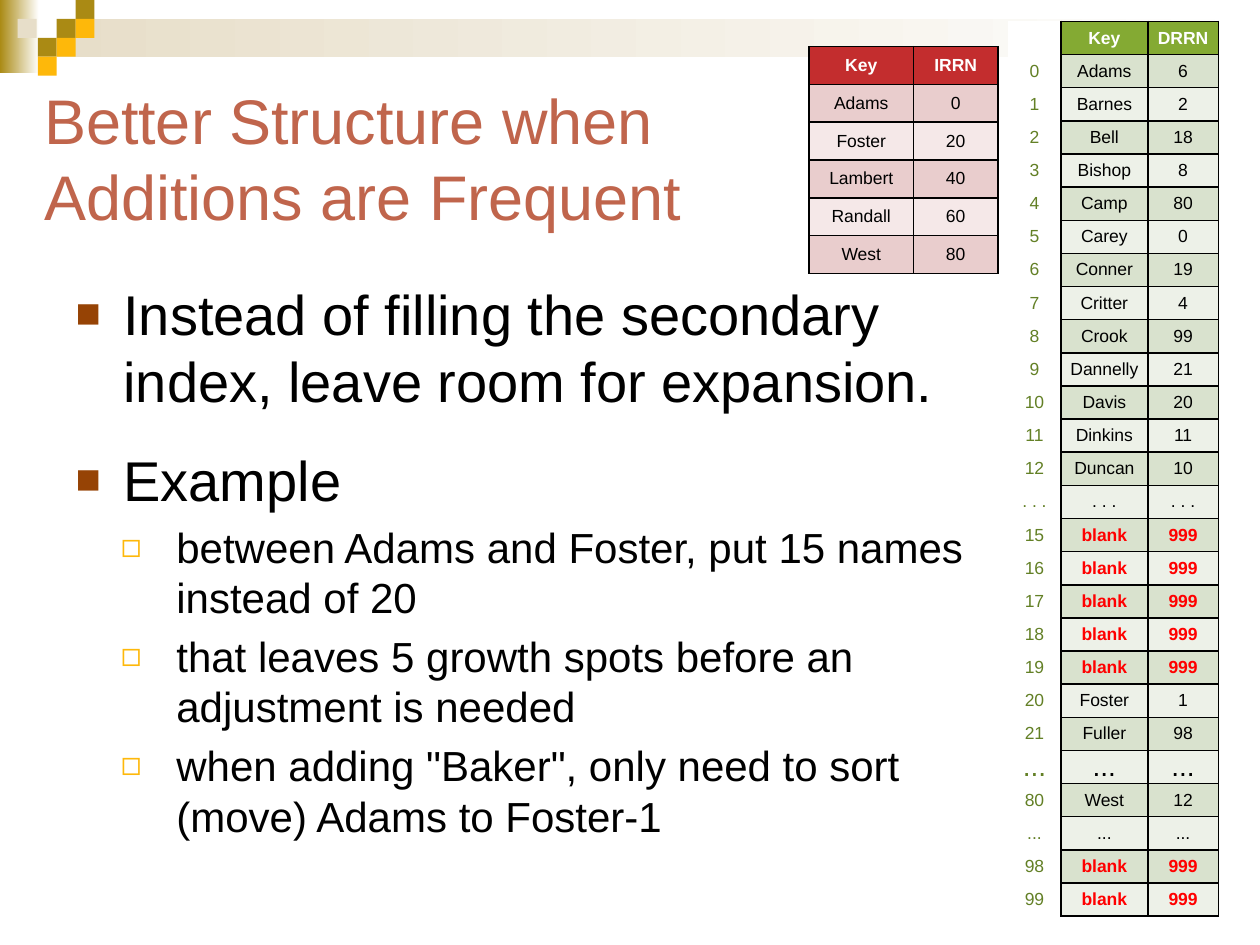
import dataclasses
import typing
import lxml.etree
import pptx
import pptx.dml.color
import pptx.enum.shapes
import pptx.enum.text
import pptx.oxml.ns
import pptx.util

SCALE = 9144
qn = pptx.oxml.ns.qn


@dataclasses.dataclass(frozen=True)
class Theme:
    font: str = "Arial"
    head: int = 36
    body: int = 32
    sub: int = 24
    cell: int = 10
    dots: int = 16
    title: str = "C0654C"
    black: str = "000000"
    white: str = "FFFFFF"
    red: str = "FF0000"
    olive: str = "AA8A14"
    gold: str = "FEB80A"
    sand: str = "E7DEC9"
    brown: str = "964305"
    green: str = "638026"


THEME = Theme()


class Block(typing.NamedTuple):
    left: int
    top: int
    width: int
    height: int
    fill: str
    fade: bool = False


class Point(typing.NamedTuple):
    text: str
    level: int = 0
    gap: typing.Optional[int] = None


class Bullet(typing.NamedTuple):
    mark: str
    color: str
    ratio: int
    left: int
    hang: int
    size: int


class Grid(typing.NamedTuple):
    left: int
    top: int
    cols: tuple
    height: int
    rows: list
    head: str
    bands: tuple
    pad: bool = True
    label: bool = False


SIDE = 15
BLOCKS = [
    Block(0, 0, 31, 58, THEME.olive, True),
    Block(45, 15, 955, 30, THEME.sand, True),
] + [
    Block(left, top, SIDE, SIDE, fill)
    for left, top, fill in [
        (45, 15, THEME.olive), (60, 0, THEME.olive), (60, 15, THEME.gold),
        (30, 30, THEME.olive), (14, 15, THEME.sand), (45, 30, THEME.gold),
        (30, 45, THEME.gold),
    ]
]

POINTS = [
    Point("Instead of filling the secondary index, leave room for expansion."),
    Point("Example", gap=18),
    Point("between Adams and Foster, put 15 names instead of 20", 1),
    Point("that leaves 5 growth spots before an adjustment is needed", 1),
    Point('when adding "Baker", only need to sort (move) Adams to Foster-1', 1),
]
BULLETS = [
    Bullet("■", THEME.brown, 75, 38, 38, THEME.body),
    Bullet("◻", THEME.gold, 80, 80, 44, THEME.sub),
]

NAMES = [
    ("Adams", "6"), ("Barnes", "2"), ("Bell", "18"), ("Bishop", "8"),
    ("Camp", "80"), ("Carey", "0"), ("Conner", "19"), ("Critter", "4"),
    ("Crook", "99"), ("Dannelly", "21"), ("Davis", "20"), ("Dinkins", "11"),
    ("Duncan", "10"),
]
SPARE = ("blank", "999")
KEYS = (
    [("", "Key", "DRRN")]
    + [(str(n), *pair) for n, pair in enumerate(NAMES)]
    + [(". . .",) * 3]
    + [(str(n), *SPARE) for n in range(15, 20)]
    + [("20", "Foster", "1"), ("21", "Fuller", "98"), ("...",) * 3]
    + [("80", "West", "12"), ("...",) * 3]
    + [(str(n), *SPARE) for n in (98, 99)]
)
BIG = KEYS.index(("...",) * 3)
INDEX = [("Key", "IRRN"), ("Adams", "0"), ("Foster", "20"),
         ("Lambert", "40"), ("Randall", "60"), ("West", "80")]
GRIDS = [
    Grid(642, 37, (83, 67), 180, INDEX, "C32D2E", ("E9CDCD", "F5E8E8")),
    Grid(800, 17, (42, 69, 56), 711, KEYS, "84AA33", ("D9E2CE", "EDF1E8"),
         pad=False, label=True),
]


def px(size: int) -> int:
    return pptx.util.Emu(size * SCALE)


def rgb(color: str) -> pptx.dml.color.RGBColor:
    return pptx.dml.color.RGBColor.from_string(color)


def node(base, tag: str, **attrs: str):
    return lxml.etree.SubElement(base, qn(tag), **attrs)


def write(para, text: str, size: int, color: str, bold: bool = False) -> None:
    run = para.add_run()
    run.text = text
    run.font.name = THEME.font
    run.font.size = pptx.util.Pt(size)
    run.font.bold = bold
    run.font.color.rgb = rgb(color)


def place(shape, left: int, top: int, width: int, height: int) -> None:
    shape.left, shape.top = px(left), px(top)
    shape.width, shape.height = px(width), px(height)


def draw_block(slide, block: Block) -> None:
    shape = slide.shapes.add_shape(
        pptx.enum.shapes.MSO_SHAPE.RECTANGLE, *map(px, block[:4]))
    shape.shadow.inherit = False
    shape.line.fill.background()
    if block.fade:
        shape.fill.gradient()
        shape.fill.gradient_angle = 0
        for stop, color in zip(shape.fill.gradient_stops, (block.fill, THEME.white)):
            stop.color.rgb = rgb(color)
    else:
        shape.fill.solid()
        shape.fill.fore_color.rgb = rgb(block.fill)


def draw_title(shape) -> None:
    place(shape, 25, 50, 900, 150)
    frame = shape.text_frame
    frame.auto_size = pptx.enum.text.MSO_AUTO_SIZE.NONE
    frame.vertical_anchor = pptx.enum.text.MSO_ANCHOR.MIDDLE
    para = frame.paragraphs[0]
    para.alignment = pptx.enum.text.PP_ALIGN.LEFT
    write(para, "Better Structure when ", THEME.head, THEME.title)
    para.add_line_break()
    write(para, "Additions are Frequent", THEME.head, THEME.title)


def draw_point(para, point: Point) -> None:
    look = BULLETS[point.level]
    para.level = point.level
    if point.gap:
        para.space_before = pptx.util.Pt(point.gap)
    props = para._p.get_or_add_pPr()
    props.set("marL", str(px(look.left)))
    props.set("indent", str(-px(look.hang)))
    node(node(props, "a:buClr"), "a:srgbClr", val=look.color)
    node(props, "a:buSzPct", val=str(look.ratio * 1000))
    node(props, "a:buFont", typeface=THEME.font)
    node(props, "a:buChar", char=look.mark)
    write(para, point.text, look.size, THEME.black)


def draw_body(shape) -> None:
    place(shape, 50, 217, 750, 425)
    frame = shape.text_frame
    frame.auto_size = pptx.enum.text.MSO_AUTO_SIZE.NONE
    for n, point in enumerate(POINTS):
        draw_point(frame.add_paragraph() if n else frame.paragraphs[0], point)


def edge(cell, sides: str) -> None:
    props = cell._tc.get_or_add_tcPr()
    for n, side in enumerate("LRTB"):
        line = lxml.etree.Element(qn("a:ln" + side), w=str(pptx.util.Pt(1)))
        if side in sides:
            node(node(line, "a:solidFill"), "a:srgbClr", val=THEME.black)
        else:
            node(line, "a:noFill")
        props.insert(n, line)


def draw_cell(cell, grid: Grid, row: int, col: int) -> None:
    text = grid.rows[row][col]
    label = grid.label and col == 0
    spare = grid.rows[row][1:] == SPARE
    fill = grid.bands[(row - 1) % 2] if row else grid.head
    ink = THEME.red if spare else THEME.black if row else THEME.white
    cell.fill.solid()
    cell.fill.fore_color.rgb = rgb(THEME.white if label else fill)
    edge(cell, "R" if label else "LRTB")
    cell.vertical_anchor = pptx.enum.text.MSO_ANCHOR.MIDDLE
    if not grid.pad:
        cell.margin_left = cell.margin_right = cell.margin_top = cell.margin_bottom = 0
    para = cell.text_frame.paragraphs[0]
    para.alignment = pptx.enum.text.PP_ALIGN.CENTER
    if text:
        size = THEME.dots if grid.label and row == BIG else THEME.cell
        write(para, text, size, THEME.green if label else ink,
              not label and (spare or row == 0))
    else:
        node(para._p, "a:endParaRPr", sz=str(THEME.cell * 100))


def draw_grid(slide, grid: Grid) -> None:
    count = len(grid.rows)
    table = slide.shapes.add_table(
        count, len(grid.cols), px(grid.left), px(grid.top),
        px(sum(grid.cols)), px(grid.height)).table
    table.first_row = table.horz_banding = False
    for col, width in zip(table.columns, grid.cols):
        col.width = px(width)
    for n, row in enumerate(table.rows):
        row.height = px(grid.height) // count
        for m, cell in enumerate(row.cells):
            draw_cell(cell, grid, n, m)


def main() -> None:
    deck = pptx.Presentation()
    deck.slide_width, deck.slide_height = px(1000), px(750)
    slide = deck.slides.add_slide(deck.slide_layouts[1])
    title, body = slide.placeholders
    for block in BLOCKS:
        draw_block(slide, block)
    draw_title(title)
    draw_body(body)
    for shape in (title, body):
        slide.shapes._spTree.append(shape._element)
    for grid in GRIDS:
        draw_grid(slide, grid)
    deck.save("out.pptx")


if __name__ == "__main__":
    main()
